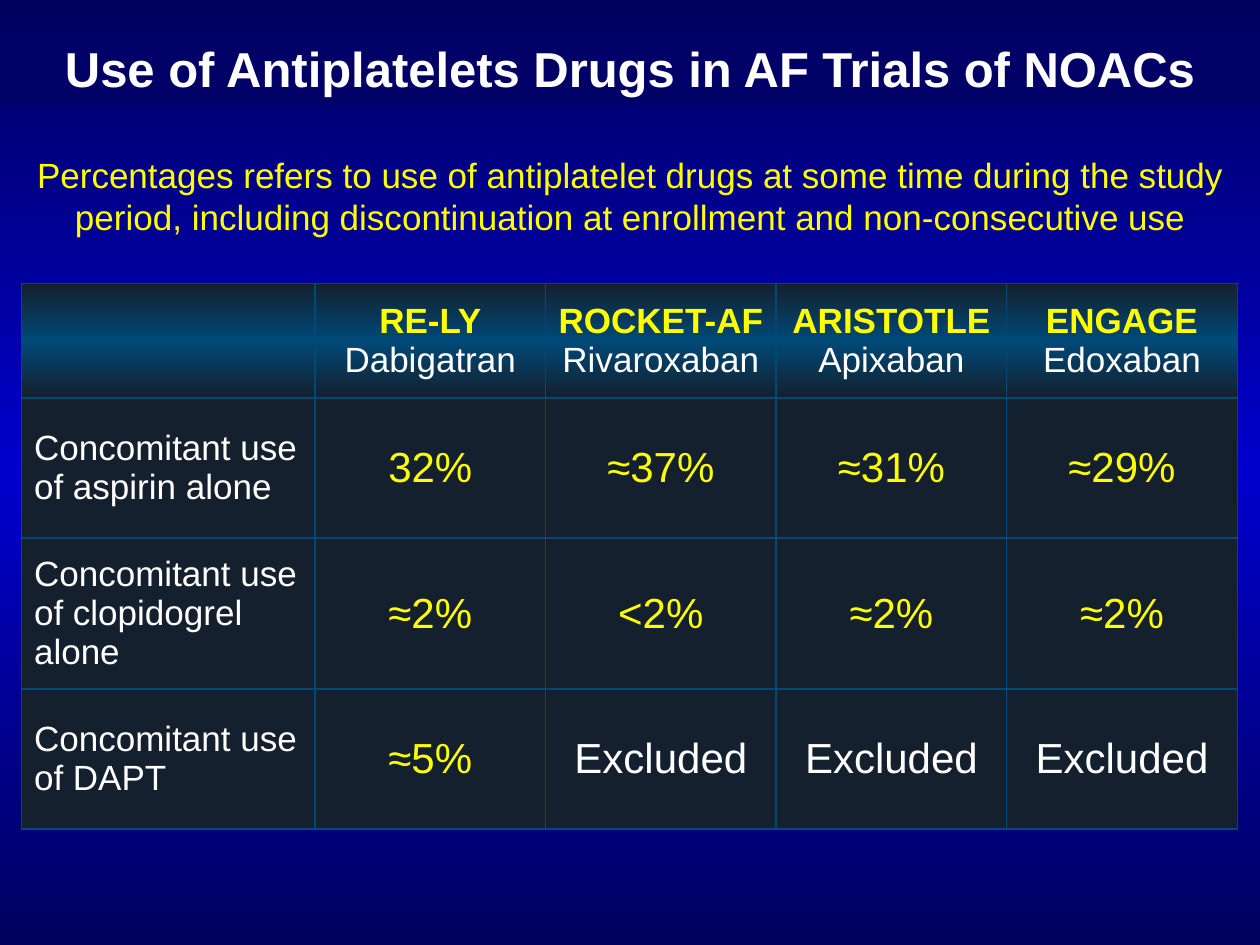
from copy import deepcopy
from lxml import etree
from pptx import Presentation
from pptx.dml.color import RGBColor
from pptx.enum.text import MSO_ANCHOR, PP_ALIGN
from pptx.oxml.ns import qn
from pptx.util import Inches, Pt

LEFT, CENTER = PP_ALIGN.LEFT, PP_ALIGN.CENTER
MIDDLE = MSO_ANCHOR.MIDDLE
WHITE = RGBColor(0xFF, 0xFF, 0xFF)
YELLOW = RGBColor(0xFF, 0xFF, 0x00)
NAVY = RGBColor(0x00, 0x00, 0x5E)
BLUE = RGBColor(0x00, 0x00, 0xCC)
BAND = RGBColor(0x00, 0x00, 0x66)
DARK = RGBColor(0x14, 0x20, 0x2E)
TEAL = RGBColor(0x00, 0x49, 0x77)


def style(para, size, color, align=CENTER, bold=False):
    para.alignment = align
    font = para.font
    font.name, font.size, font.bold = "Arial", Pt(size), bold
    font.color.rgb = color


def blend(fill, node, edge, core):
    fill.gradient()
    fill.gradient_angle = 270
    first, last = fill.gradient_stops
    first.color.rgb, first.position = edge, 0
    last.color.rgb, last.position = core, 0.5
    stops = node.find(".//" + qn("a:gsLst"))
    end = deepcopy(stops[0])
    end.set("pos", "100000")
    stops.append(end)


deck = Presentation()
deck.slide_width, deck.slide_height = Inches(10), Inches(7.5)
slide = deck.slides.add_slide(deck.slide_layouts[6])
blend(slide.background.fill, slide.element, NAVY, BLUE)

title = slide.shapes.add_textbox(0, Inches(0.3), deck.slide_width, Inches(0.53))
title.fill.solid()
title.fill.fore_color.rgb = BAND
frame = title.text_frame
frame.word_wrap = True
frame.vertical_anchor = MIDDLE
frame.text = "Use of Antiplatelets Drugs in AF Trials of NOACs"
style(frame.paragraphs[0], 28, WHITE, bold=True)
frame.paragraphs[0].line_spacing = 0.9

rows = [
    ["", "RE-LY\nDabigatran", "ROCKET-AF\nRivaroxaban", "ARISTOTLE\nApixaban", "ENGAGE\nEdoxaban"],
    ["Concomitant use of aspirin alone", "32%", "≈37%", "≈31%", "≈29%"],
    ["Concomitant use of clopidogrel alone", "≈2%", "<2%", "≈2%", "≈2%"],
    ["Concomitant use of DAPT", "≈5%", "Excluded", "Excluded", "Excluded"],
]
widths = [2.33] + [1.83] * 4
heights = [0.91, 1.11, 1.2, 1.11]
grid = slide.shapes.add_table(
    len(rows), len(widths), Inches(0.17), Inches(2.25),
    Inches(sum(widths)), Inches(sum(heights))).table
for col, width in zip(grid.columns, widths):
    col.width = Inches(width)
for row, height in zip(grid.rows, heights):
    row.height = Inches(height)

for r, row in enumerate(rows):
    for c, text in enumerate(row):
        cell = grid.cell(r, c)
        cell.text = text
        cell.vertical_anchor = MIDDLE
        props = cell._tc.get_or_add_tcPr()
        for side in ("lnL", "lnR", "lnT", "lnB"):
            line = etree.SubElement(props, qn("a:" + side), w=str(Pt(1)))
            solid = etree.SubElement(line, qn("a:solidFill"))
            etree.SubElement(solid, qn("a:srgbClr"), val=str(TEAL))
        if r == 0:
            blend(cell.fill, props, DARK, TEAL)
        else:
            cell.fill.solid()
            cell.fill.fore_color.rgb = DARK
        for n, para in enumerate(cell.text_frame.paragraphs):
            if r == 0:
                style(para, 20, WHITE if n else YELLOW, bold=n == 0)
            elif c == 0:
                style(para, 20, WHITE, LEFT)
            else:
                style(para, 24, YELLOW if "%" in text else WHITE)

note = slide.shapes.add_textbox(Inches(0.17), Inches(1.17), Inches(9.67), Inches(0.77))
note.text_frame.word_wrap = True
note.text_frame.text = (
    "Percentages refers to use of antiplatelet drugs at some time during the study "
    "period, including discontinuation at enrollment and non-consecutive use")
style(note.text_frame.paragraphs[0], 20, YELLOW)

deck.save("out.pptx")
